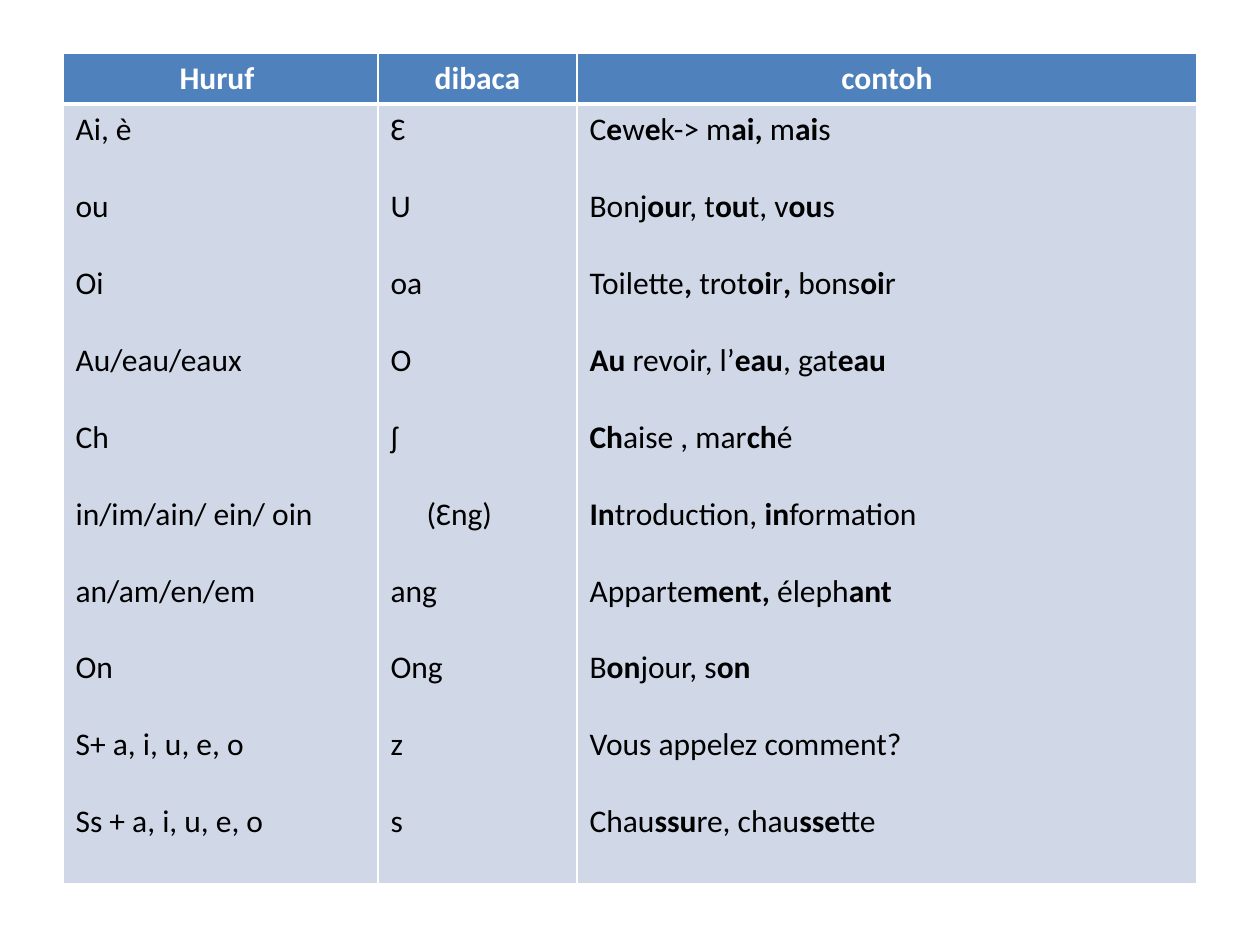
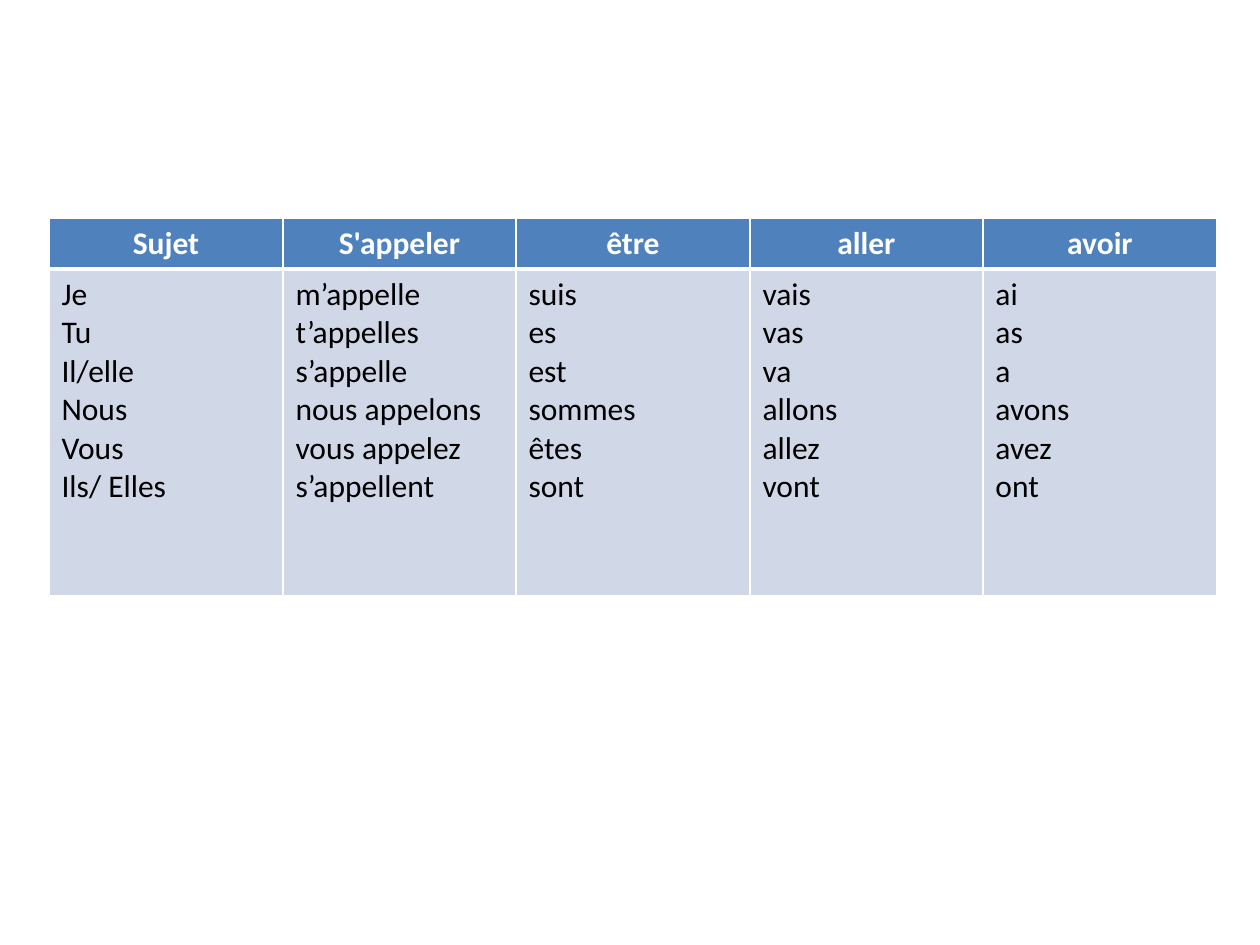
from dataclasses import dataclass
from itertools import chain

from lxml.etree import SubElement
from pptx import Presentation
from pptx.dml.color import RGBColor
from pptx.enum.text import PP_ALIGN as Align
from pptx.oxml import parse_xml
from pptx.oxml.ns import nsdecls, qn
from pptx.util import Emu, Pt

EMU_PER_INCH = 914400
PX_PER_INCH = 126
SLIDE_WIDTH, SLIDE_HEIGHT = 1260, 945


@dataclass(frozen=True)
class Theme:
    font: str = "Calibri"
    text_size: int = 18
    header_fill: str = "4F81BD"
    body_fill: str = "D0D8E8"
    header_text: str = "FFFFFF"
    body_text: str = "000000"
    border: str = "FFFFFF"
    thin_border: int = 1
    thick_border: int = 3


THEME = Theme()


@dataclass(frozen=True)
class CellStyle:
    fill: str
    color: str
    bold: bool
    align: Align
    borders: dict[str, int]


THIN, THICK = THEME.thin_border, THEME.thick_border
HEADER = CellStyle(THEME.header_fill, THEME.header_text, True, Align.CENTER,
                   {"L": THIN, "R": THIN, "T": THIN, "B": THICK})
BODY = CellStyle(THEME.body_fill, THEME.body_text, False, Align.LEFT,
                 {"L": THIN, "R": THIN, "T": THICK, "B": THIN})


@dataclass(frozen=True)
class Line:
    """One line of text; parts between asterisks are bold."""
    text: str
    indent: int = 0


@dataclass(frozen=True)
class Column:
    title: str
    lines: list[Line]
    width: int


@dataclass(frozen=True)
class TablePage:
    left: int
    top: int
    header_height: int
    body_height: int
    line_gap: int  # points after each line
    columns: list[Column]


def px(length: int) -> Emu:
    return Emu(round(length * EMU_PER_INCH / PX_PER_INCH))


def make_columns(titles: list[str], widths: list[int],
                 rows: list[tuple[str | Line, ...]]) -> list[Column]:
    """Turn rows of text into columns, one list of lines each."""
    lines = [[item if isinstance(item, Line) else Line(item) for item in column]
             for column in zip(*rows)]
    return [Column(*parts) for parts in zip(titles, lines, widths)]


def equal_widths(total: int, count: int) -> list[int]:
    """Whole widths that add up to the total."""
    edges = [round(total * i / count) for i in range(count + 1)]
    return [right - left for left, right in zip(edges, edges[1:])]


def set_borders(cell, borders: dict[str, int]) -> None:
    properties = cell._tc.get_or_add_tcPr()
    for index, (side, width) in enumerate(borders.items()):
        border = parse_xml(f'<a:ln{side} {nsdecls("a")} w="{Pt(width)}"/>')
        fill = SubElement(border, qn("a:solidFill"))
        SubElement(fill, qn("a:srgbClr"), val=THEME.border)
        properties.insert(index, border)


def add_spans(para, text: str, style: CellStyle) -> None:
    for index, part in enumerate(text.split("*")):
        if not part:
            continue
        span = para.add_run()
        span.text = part
        font_format = {"name": THEME.font, "size": Pt(THEME.text_size),
                       "bold": style.bold or index % 2 == 1}
        for name, value in font_format.items():
            setattr(span.font, name, value)
        span.font.color.rgb = RGBColor.from_string(style.color)


def fill_cell(cell, lines: list[Line], style: CellStyle, gap: int = 0) -> None:
    cell.fill.solid()
    cell.fill.fore_color.rgb = RGBColor.from_string(style.fill)
    set_borders(cell, style.borders)
    frame = cell.text_frame
    paragraph_format = {"alignment": style.align, "space_after": Pt(gap)}
    new_paras = (frame.add_paragraph() for _ in lines[1:])
    for para, line in zip(chain(frame.paragraphs[:1], new_paras), lines):
        for name, value in paragraph_format.items():
            setattr(para, name, value)
        if line.indent:
            para._p.get_or_add_pPr().set("marL", str(px(line.indent)))
        add_spans(para, line.text, style)


def add_table_page(deck, page: TablePage) -> None:
    slide = deck.slides.add_slide(deck.slide_layouts[6])
    width = sum(column.width for column in page.columns)
    heights = [page.header_height, page.body_height]
    table = slide.shapes.add_table(
        len(heights), len(page.columns), px(page.left), px(page.top),
        px(width), px(sum(heights))).table
    table.horz_banding = False
    for row, height in zip(table.rows, heights):
        row.height = px(height)
    for index, column in enumerate(page.columns):
        table.columns[index].width = px(column.width)
        fill_cell(table.cell(0, index), [Line(column.title)], HEADER)
        fill_cell(table.cell(1, index), column.lines, BODY, page.line_gap)


PRONUNCIATION = TablePage(
    left=63, top=53, header_height=51, body_height=780, line_gap=22,
    columns=make_columns(
        ["Huruf ", "dibaca", "contoh"], [315, 199, 620],
        [
            ("Ai, è", "Ɛ", "C*e*w*e*k-> m*ai, *m*ai*s"),
            ("ou", "U", "Bonj*ou*r, t*ou*t, v*ou*s"),
            ("Oi", "oa", "Toilette*, *trot*oi*r*, *bons*oi*r"),
            ("Au/eau/eaux", "O", "*Au *revoir, l’*eau*, gat*eau*"),
            ("Ch", "ʃ", "*Ch*aise , mar*ch*é"),
            ("in/im/ain/ ein/ oin", Line("(Ɛng)", indent=36),
             "*In*troduction, *in*formation"),
            ("an/am/en/em", "ang", "Apparte*ment, *éleph*ant*"),
            ("On", "Ong", "B*on*jour, s*on*"),
            ("S+ a, i, u, e, o", "z", "Vous appelez comment?"),
            ("Ss + a, i, u, e, o", "s", "Chau*ssu*re, chau*sse*tte"),
        ]))

CONJUGATION = TablePage(
    left=49, top=218, header_height=51, body_height=327, line_gap=0,
    columns=make_columns(
        ["Sujet", "S'appeler", "être", "aller", "avoir"], equal_widths(1168, 5),
        [
            ("Je", "m’appelle", "suis", "vais", "ai"),
            ("Tu", "t’appelles", "es", "vas", "as"),
            ("Il/elle", "s’appelle", "est", "va", "a"),
            ("Nous", "nous appelons", "sommes", "allons", "avons"),
            ("Vous", "vous appelez", "êtes", "allez", "avez"),
            ("Ils/ Elles", "s’appellent", "sont", "vont", "ont"),
        ]))


def main() -> None:
    deck = Presentation()
    deck.slide_width, deck.slide_height = px(SLIDE_WIDTH), px(SLIDE_HEIGHT)
    for page in (PRONUNCIATION, CONJUGATION):
        add_table_page(deck, page)
    deck.save("out.pptx")


if __name__ == "__main__":
    main()
